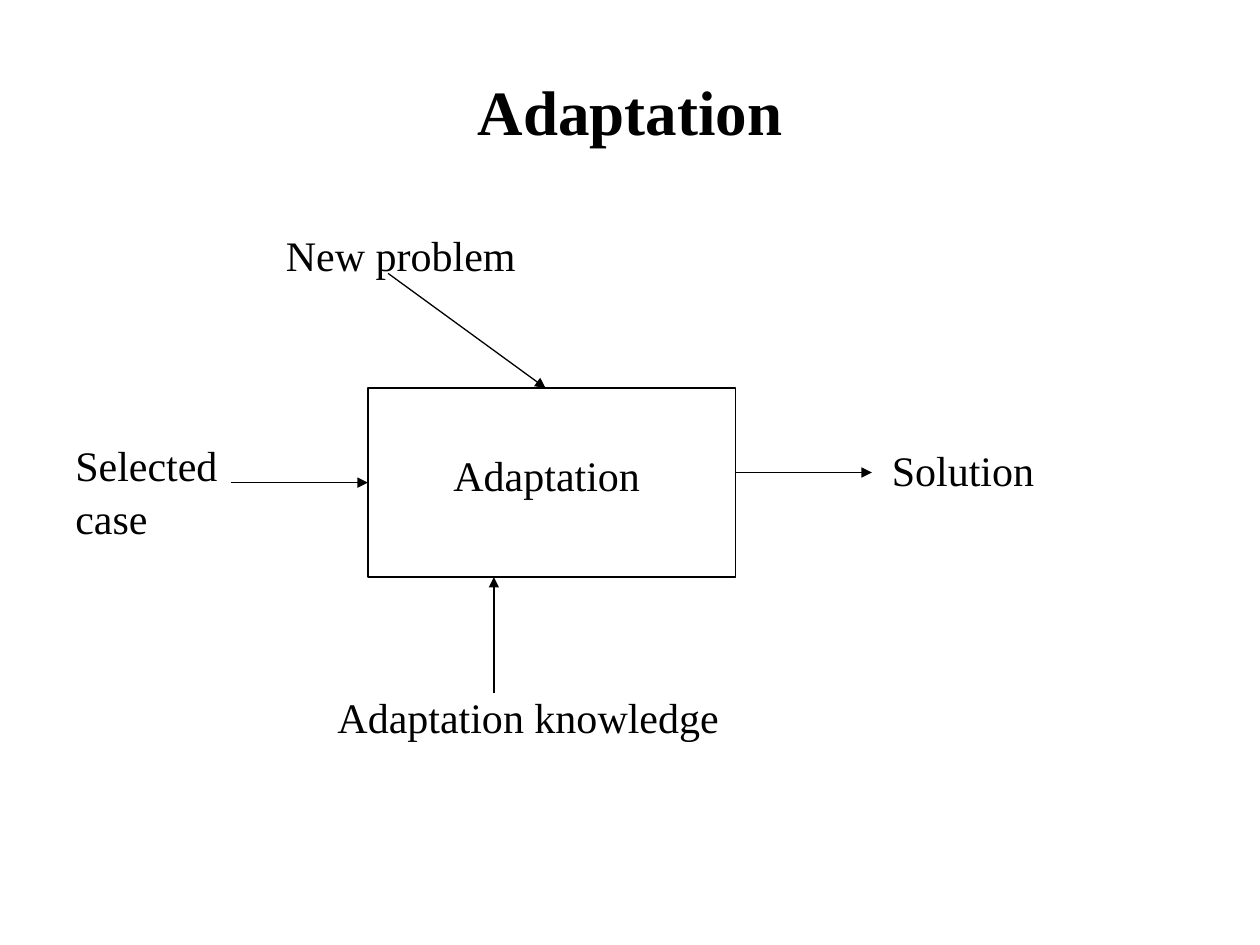
from dataclasses import dataclass

import pptx
import pptx.dml.color
import pptx.enum.shapes
import pptx.enum.text
import pptx.oxml
import pptx.oxml.ns
import pptx.util
from pptx.util import Inches

COLORS = {"ink": "000000"}
FONT = "Times New Roman"
INK = pptx.dml.color.RGBColor.from_string(COLORS["ink"])
LINE_WIDTH = pptx.util.Pt(0.75)


@dataclass(frozen=True)
class Label:
    text: str
    left: float
    top: float
    width: float
    height: float = 0.5
    wrap: bool = False


@dataclass(frozen=True)
class Flow:
    """A label and the arrow linking it with the process box."""
    label: Label
    start: tuple[float, float]
    end: tuple[float, float]
    box_site: int | None = None


PROCESS = Label("Adaptation", 3.5, 3.5, 1.68)
FLOWS = [
    Flow(Label("New problem", 2.17, 1.75, 2.02), (3.08, 2.17), (4.33, 3.08)),
    Flow(Label("Selected case", 0.5, 3.42, 1.93, 0.9, wrap=True),
         (1.83, 3.83), (2.92, 3.83), box_site=1),
    Flow(Label("Adaptation knowledge", 2.58, 5.42, 3.23), (3.92, 5.5), (3.92, 4.58)),
    Flow(Label("Solution", 6.98, 3.46, 1.33), (5.83, 3.75), (6.92, 3.75)),
]


def add_run(p, text: str, size: float, bold: bool = False) -> None:
    r = p.add_run()
    r.text = text
    r.font.name = FONT
    r.font.size = pptx.util.Pt(size)
    r.font.bold = bold
    r.font.color.rgb = INK


def add_title(s, text: str) -> None:
    sp = s.shapes.title
    sp.left, sp.top, sp.width, sp.height = map(Inches, (0.75, 0.25, 8.5, 1.25))
    tf = sp.text_frame
    tf.vertical_anchor = pptx.enum.text.MSO_ANCHOR.MIDDLE
    p = tf.paragraphs[0]
    p.alignment = pptx.enum.text.PP_ALIGN.CENTER
    add_run(p, text, 36, bold=True)


def add_label(shapes, label: Label) -> None:
    sp = shapes.add_textbox(Inches(label.left), Inches(label.top),
                            Inches(label.width), Inches(label.height))
    tf = sp.text_frame
    tf.word_wrap = label.wrap
    tf.auto_size = pptx.enum.text.MSO_AUTO_SIZE.SHAPE_TO_FIT_TEXT
    p = tf.paragraphs[0]
    p.line_spacing = 1.05
    add_run(p, label.text, 24)


def add_box(s):
    sp = s.shapes.add_shape(pptx.enum.shapes.MSO_SHAPE.RECTANGLE,
                            Inches(2.92), Inches(3.08), Inches(2.92), Inches(1.5))
    sp.shadow.inherit = False
    sp.fill.background()
    sp.line.color.rgb = INK
    sp.line.width = LINE_WIDTH
    return sp


def add_flow(s, flow: Flow, box) -> None:
    group = s.shapes.add_group_shape()
    add_label(group.shapes, flow.label)
    arrow = group.shapes.add_connector(
        pptx.enum.shapes.MSO_CONNECTOR.STRAIGHT,
        *map(Inches, flow.start + flow.end))
    arrow.line.color.rgb = INK
    arrow.line.width = LINE_WIDTH
    tail = pptx.oxml.parse_xml(
        f'<a:tailEnd {pptx.oxml.ns.nsdecls("a")} type="triangle"/>')
    arrow.line._get_or_add_ln().append(tail)
    arrow._element.spPr.append(
        pptx.oxml.parse_xml(f'<a:effectLst {pptx.oxml.ns.nsdecls("a")}/>'))
    if flow.box_site is not None:
        arrow.end_connect(box, flow.box_site)


def main() -> None:
    prs = pptx.Presentation()
    prs.slide_width, prs.slide_height = Inches(10), Inches(7.5)
    s = prs.slides.add_slide(prs.slide_layouts.get_by_name("Title Only"))
    add_title(s, "Adaptation")
    add_label(s.shapes, PROCESS)
    box = add_box(s)
    for flow in FLOWS:
        add_flow(s, flow, box)
    prs.save("out.pptx")


if __name__ == "__main__":
    main()
